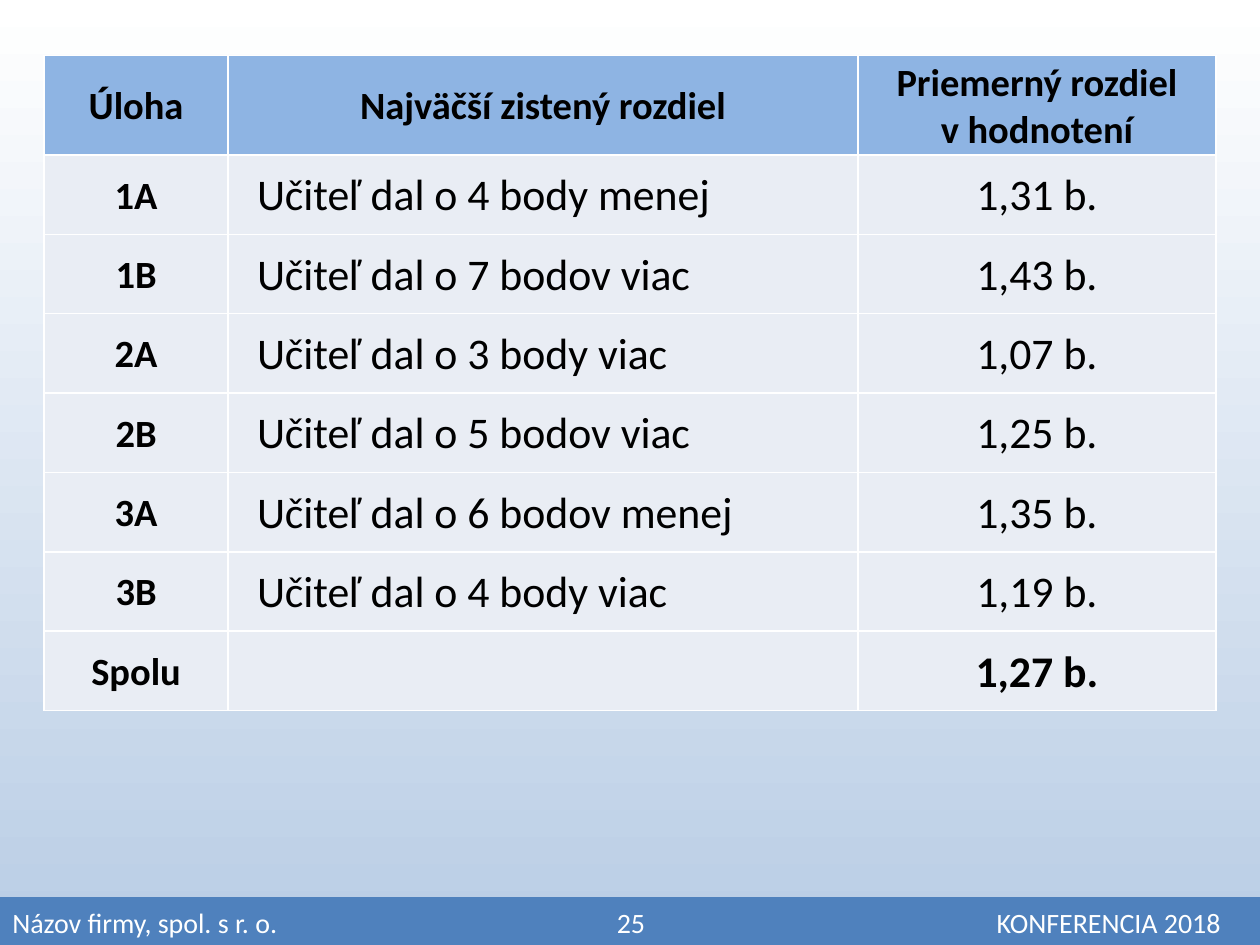
"""Build a slide with a table of scoring differences and a footer bar."""
from lxml import etree
from pptx import Presentation
from pptx.dml.color import RGBColor
from pptx.enum.shapes import MSO_SHAPE
from pptx.enum.text import MSO_ANCHOR, PP_ALIGN
from pptx.oxml.ns import qn
from pptx.util import Inches, Pt

RECT = MSO_SHAPE.RECTANGLE
LEFT, CENTER = PP_ALIGN.LEFT, PP_ALIGN.CENTER
MIDDLE, BOTTOM = MSO_ANCHOR.MIDDLE, MSO_ANCHOR.BOTTOM
FONT = "Calibri"
COLORS = {
    "white": "FFFFFF", "black": "000000", "sky": "B9CDE5",
    "header": "8EB4E3", "body": "E9EDF4", "bar": "4F81BD",
}
COL_WIDTHS = [1.46, 5, 2.84]
HEADER_HEIGHT, ROW_HEIGHT = 0.79, 0.63
ROWS = [
    ("Úloha", "Najväčší zistený rozdiel", "Priemerný rozdiel\vv hodnotení"),
    ("1A", "Učiteľ dal o 4 body menej", "1,31 b."),
    ("1B", "Učiteľ dal o 7 bodov viac", "1,43 b."),
    ("2A", "Učiteľ dal o 3 body viac", "1,07 b."),
    ("2B", "Učiteľ dal o 5 bodov viac", "1,25 b."),
    ("3A", "Učiteľ dal o 6 bodov menej", "1,35 b."),
    ("3B", "Učiteľ dal o 4 body viac", "1,19 b."),
    ("Spolu", "", "1,27 b."),
]
FOOTER = "Názov firmy, spol. s r. o.\t25\tKONFERENCIA 2018"
FOOTER_TABS = [("ctr", 4.91), ("r", 9.59)]


def rgb(name):
    """Return the named colour."""
    return RGBColor.from_string(COLORS[name])


def set_background(slide):
    """Fill the background with a gradient from top to bottom."""
    fill = slide.background.fill
    fill.gradient()
    fill.gradient_angle = 270
    for stop, position, name in zip(fill.gradient_stops, (0, 1), ("white", "sky")):
        stop.position = position
        stop.color.rgb = rgb(name)


def set_text(tf, text, size, color, bold=False, align=LEFT):
    """Write one paragraph and format its runs."""
    tf.text = text
    p = tf.paragraphs[0]
    p.alignment = align
    for r in p.runs:
        r.font.name = FONT
        r.font.size = Pt(size)
        r.font.bold = bold
        r.font.color.rgb = rgb(color)


def add_borders(cell):
    """Draw a thin white line on each side of a cell."""
    tc_pr = cell._tc.get_or_add_tcPr()
    for side in ("a:lnL", "a:lnR", "a:lnT", "a:lnB"):
        ln = etree.SubElement(tc_pr, qn(side), w=str(Pt(1)))
        solid = etree.SubElement(ln, qn("a:solidFill"))
        etree.SubElement(solid, qn("a:srgbClr"), val=COLORS["white"])


def format_cell(cell, text, row, col):
    """Fill a cell and style its text by its place in the table."""
    is_header = row == 0
    is_label = is_header or col == 0
    is_finding = col == 1 and not is_header
    add_borders(cell)
    cell.fill.solid()
    cell.fill.fore_color.rgb = rgb("header" if is_header else "body")
    cell.vertical_anchor = MIDDLE
    cell.margin_left = Inches(0.23 if is_finding else 0.02)
    cell.margin_right = cell.margin_top = Inches(0.02)
    cell.margin_bottom = 0
    set_text(cell.text_frame, text, 22 if is_label else 25, "black",
             bold=is_label or row == len(ROWS) - 1,
             align=LEFT if is_finding else CENTER)


def add_results_table(slide):
    """Add the table of differences for each task."""
    heights = [HEADER_HEIGHT] + [ROW_HEIGHT] * (len(ROWS) - 1)
    table = slide.shapes.add_table(
        len(ROWS), len(COL_WIDTHS), Inches(0.35), Inches(0.44),
        Inches(sum(COL_WIDTHS)), Inches(sum(heights))).table
    table.horz_banding = False
    for column, width in zip(table.columns, COL_WIDTHS):
        column.width = Inches(width)
    for i, (values, height) in enumerate(zip(ROWS, heights)):
        table.rows[i].height = Inches(height)
        for j, text in enumerate(values):
            format_cell(table.cell(i, j), text, i, j)


def add_footer(slide):
    """Add the footer bar with its text on tab stops."""
    sp = slide.shapes.add_shape(RECT, 0, Inches(7.12), Inches(10), Inches(0.38))
    sp.shadow.inherit = False
    sp.fill.solid()
    sp.fill.fore_color.rgb = rgb("bar")
    sp.line.fill.background()
    tf = sp.text_frame
    tf.word_wrap = True
    tf.vertical_anchor = BOTTOM
    set_text(tf, FOOTER, 16, "white")
    tabs = etree.SubElement(tf.paragraphs[0]._p.get_or_add_pPr(), qn("a:tabLst"))
    for align, position in FOOTER_TABS:
        etree.SubElement(tabs, qn("a:tab"), pos=str(Inches(position)), algn=align)


def main():
    """Build and save the slide."""
    prs = Presentation()
    prs.slide_width, prs.slide_height = Inches(10), Inches(7.5)
    slide = prs.slides.add_slide(prs.slide_layouts[6])
    set_background(slide)
    add_results_table(slide)
    add_footer(slide)
    prs.save("out.pptx")


if __name__ == "__main__":
    main()
